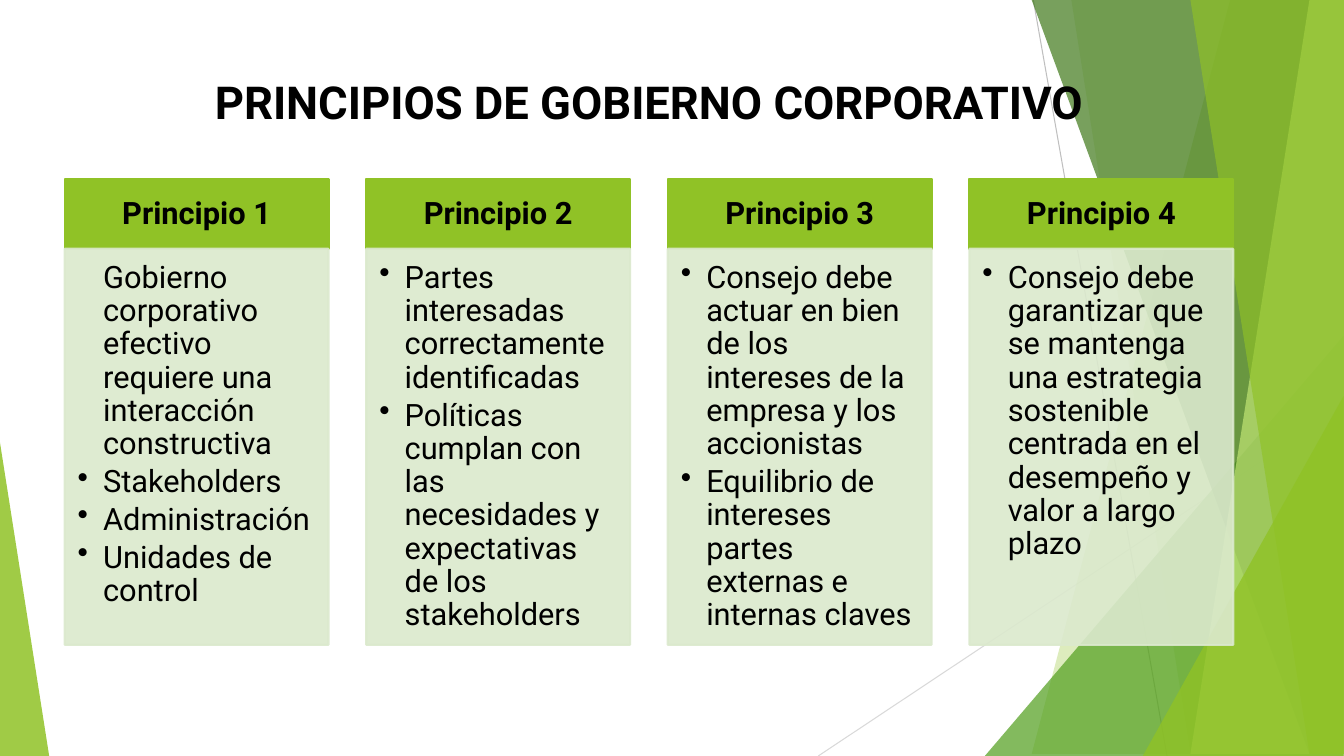
from lxml import etree
from pptx import Presentation
from pptx import util as u
from pptx.dml import color
from pptx.enum import shapes, text
from pptx.oxml import ns

FONT = "Roboto"
GREEN, PALE, BLACK = "90C226", "DBE9CD", "000000"
WIDTH, HEIGHT = 33.87, 19.05

# Backdrop facets, back to front: bands run to the right edge, triangles rise to one side
FACETS = [
    # kind, geometry in cm, colour, opacity
    ("band", (31.19, 25.5), GREEN, 30),
    ("band", (26.67, 30.05), GREEN, 20),
    ("triangle", (24.82, 8.46, 9.04, 10.59, 1), "54A021", 72),
    ("band", (25.93, 32.79), "3F7819", 70),
    ("band", (33.1, 30.28), "C0E474", 70),
    ("band", (30.38, 33.48), GREEN, 65),
    ("triangle", (28.8, 9.98, 5.06, 9.07, 1), GREEN, 80),
    ("triangle", (0, 11.15, 1.24, 7.9, 0), GREEN, 85),
]
HAIRLINES = [
    ((26.04, 0, 29.41, HEIGHT), "BFBFBF"),
    ((WIDTH, 10.24, 20.62, HEIGHT), "D9D9D9"),
]

# Each principle: lines of (text, has a bullet)
PRINCIPLES = [
    [("Gobierno corporativo efectivo requiere una interacción constructiva", False),
     ("Stakeholders", True),
     ("Administración", True),
     ("Unidades de control", True)],
    [("Partes interesadas correctamente identificadas", True),
     ("Políticas cumplan con las necesidades y expectativas de los stakeholders", True)],
    [("Consejo debe actuar en bien de los intereses de la empresa y los accionistas", True),
     ("Equilibrio de intereses partes externas e internas claves", True)],
    [("Consejo debe garantizar que se mantenga una estrategia sostenible centrada "
      "en el desempeño y valor a largo plazo", True)],
]


def rgb(value):
    return color.RGBColor.from_string(value)


def paint(fill, value, opacity=100):
    fill.solid()
    fill.fore_color.rgb = rgb(value)
    if opacity < 100:
        solid = fill._xPr.find(ns.qn("a:solidFill"))
        etree.SubElement(solid[0], ns.qn("a:alpha"), val=str(opacity * 1000))


def add_run(paragraph, words, size, bold=False):
    run = paragraph.add_run()
    run.text = words
    run.font.name = FONT
    run.font.size = u.Pt(size)
    run.font.bold = bold
    run.font.color.rgb = rgb(BLACK)


def set_insets(frame, left, top, right, bottom):
    frame.margin_left, frame.margin_top = u.Cm(left), u.Cm(top)
    frame.margin_right, frame.margin_bottom = u.Cm(right), u.Cm(bottom)


def set_bullet(paragraph, bulleted):
    properties = paragraph._p.get_or_add_pPr()
    properties.set("marL", str(u.Cm(0.64)))
    properties.set("indent", str(u.Cm(-0.64 if bulleted else 0)))
    if bulleted:
        etree.SubElement(properties, ns.qn("a:buChar"), char="•")
    else:
        etree.SubElement(properties, ns.qn("a:buNone"))


def add_band(slide, top_x, bottom_x):
    builder = slide.shapes.build_freeform(top_x, 0, scale=u.Cm(1))
    builder.add_line_segments([(WIDTH, 0), (WIDTH, HEIGHT), (bottom_x, HEIGHT)])
    return builder.convert_to_shape()


def add_triangle(slide, left, top, width, height, apex):
    shape = slide.shapes.add_shape(
        shapes.MSO_SHAPE.ISOSCELES_TRIANGLE,
        u.Cm(left), u.Cm(top), u.Cm(width), u.Cm(height))
    shape.adjustments[0] = apex
    return shape


def add_backdrop(slide):
    for ends, value in HAIRLINES:
        line = slide.shapes.add_connector(
            shapes.MSO_CONNECTOR.STRAIGHT, *[u.Cm(end) for end in ends])
        line.line.color.rgb = rgb(value)
        line.line.width = u.Pt(0.75)
        etree.SubElement(line._element.spPr, ns.qn("a:effectLst"))
    builders = {"band": add_band, "triangle": add_triangle}
    for kind, geometry, value, opacity in FACETS:
        shape = builders[kind](slide, *geometry)
        shape.shadow.inherit = False
        paint(shape.fill, value, opacity)
        shape.line.fill.background()


def add_title(slide, left, top, width, height):
    title = slide.shapes.title
    title.left, title.top = u.Cm(left), u.Cm(top)
    title.width, title.height = u.Cm(width), u.Cm(height)
    # Bring the title in front of the backdrop
    title.element.getparent().append(title.element)
    frame = title.text_frame
    frame.word_wrap = True
    frame.auto_size = text.MSO_AUTO_SIZE.NONE
    frame.vertical_anchor = text.MSO_ANCHOR.MIDDLE
    paragraph = frame.paragraphs[0]
    paragraph.alignment = text.PP_ALIGN.CENTER
    add_run(paragraph, "PRINCIPIOS DE GOBIERNO CORPORATIVO", 32.4, bold=True)


def add_panel(slide, left, top, width, height, value, opacity=100):
    panel = slide.shapes.add_shape(
        shapes.MSO_SHAPE.RECTANGLE,
        u.Cm(left), u.Cm(top), u.Cm(width), u.Cm(height))
    panel.shadow.inherit = False
    paint(panel.fill, value, opacity)
    paint(panel.line.fill, value, opacity)
    panel.line.width = u.Pt(1.5)
    panel.text_frame.word_wrap = True
    return panel.text_frame


def add_principle(slide, left, top, width, height, heading, lines):
    header_height = 1.75
    # Heading
    frame = add_panel(slide, left, top, width, header_height, GREEN)
    set_insets(frame, 0.43, 0.25, 0.43, 0.25)
    frame.vertical_anchor = text.MSO_ANCHOR.MIDDLE
    paragraph = frame.paragraphs[0]
    paragraph.alignment = text.PP_ALIGN.CENTER
    paragraph.line_spacing = 0.9
    add_run(paragraph, heading, 22, bold=True)
    # Body
    frame = add_panel(slide, left, top + header_height, width,
                      height - header_height, PALE, 90)
    set_insets(frame, 0.33, 0.33, 0.43, 0.48)
    frame.vertical_anchor = text.MSO_ANCHOR.TOP
    for index, (words, bulleted) in enumerate(lines):
        paragraph = frame.add_paragraph() if index else frame.paragraphs[0]
        paragraph.alignment = text.PP_ALIGN.LEFT
        paragraph.line_spacing = 0.9
        paragraph.space_after = u.Pt(3.3)
        set_bullet(paragraph, bulleted)
        add_run(paragraph, words, 22)


def add_principles(slide, left, top, width, height):
    column_width = 6.65
    pitch = (width - column_width) / (len(PRINCIPLES) - 1)
    for index, lines in enumerate(PRINCIPLES):
        add_principle(slide, left + index * pitch, top, column_width, height,
                      f"Principio {index + 1}", lines)


def main():
    presentation = Presentation()
    presentation.slide_width, presentation.slide_height = u.Cm(WIDTH), u.Cm(HEIGHT)
    slide = presentation.slides.add_slide(presentation.slide_layouts[5])
    add_backdrop(slide)
    add_title(slide, 4.42, 1.7, 23.88, 1.73)
    add_principles(slide, 1.63, 4.52, 29.45, 11.73)
    presentation.save("out.pptx")


if __name__ == "__main__":
    main()
